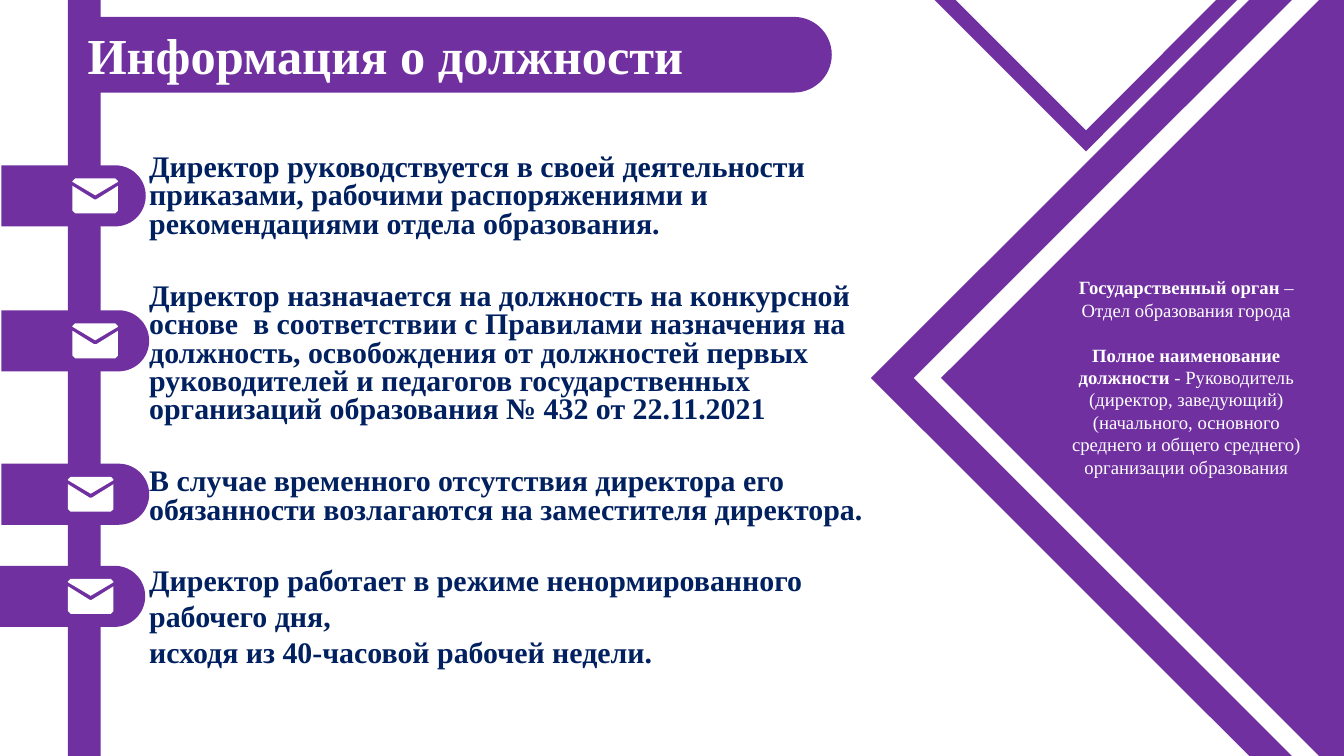
import math

import pptx
import pptx.dml.color
import pptx.enum.shapes
import pptx.enum.text
import pptx.util

Cm = pptx.util.Cm
Pt = pptx.util.Pt
RGBColor = pptx.dml.color.RGBColor

PURPLE = RGBColor(0x70, 0x30, 0xA0)
WHITE = RGBColor(0xFF, 0xFF, 0xFF)
NAVY = RGBColor(0x00, 0x20, 0x60)

WIDTH, HEIGHT = 50.8, 28.58
MIDDLE = HEIGHT / 2
PILL_HEIGHT = 2.31
ENVELOPE_HEIGHT = 1.32

ENVELOPE_BODY = [(0, 0.28), (0.82, 0.79), (0.9, 0.79), (1.72, 0.28),
                 (1.72, 1.22), (1.62, 1.32), (0.1, 1.32), (0, 1.22)]
ENVELOPE_FLAP = [(0, 0.1), (0.1, 0), (1.62, 0), (1.72, 0.1),
                 (1.72, 0.13), (0.86, 0.64), (0, 0.13)]

MARKERS = [
    (0.05, 6.25, 5.46, 2.74),
    (0.05, 11.73, 5.59, 2.74),
    (0.05, 17.53, 5.59, 2.57),
    (0, 21.39, 5.49, 2.57),
]

DUTIES = [
    ("Директор руководствуется в своей деятельности приказами, рабочими "
     "распоряжениями и рекомендациями отдела образования.", 8.4, 0.79),
    ("Директор назначается на должность на конкурсной основе  в соответствии "
     "с Правилами назначения на должность, освобождения от должностей первых "
     "руководителей и педагогов государственных организаций образования "
     "№ 432 от 22.11.2021", 47, 0.79),
    ("В случае временного отсутствия директора его обязанности возлагаются "
     "на заместителя директора.", 47, 0.79),
    ("Директор работает в режиме ненормированного рабочего дня,", 39, 1),
    ("исходя из 40-часовой рабочей недели.", 0, 1),
]

POSITION = [
    ("Государственный орган ", "– Отдел образования города", 0),
    ("Полное наименование должности ",
     "- Руководитель (директор, заведующий) (начального, основного среднего "
     "и общего среднего) организации образования", 24),
]


class SlideBuilder:
    font = "Times New Roman"

    def __init__(self, slide):
        self.slide = slide

    def paint(self, sp, color):
        sp.shadow.inherit = False
        sp.fill.solid()
        sp.fill.fore_color.rgb = color
        sp.line.fill.background()

    def bar(self, left, top, width, height, color):
        sp = self.slide.shapes.add_shape(
            pptx.enum.shapes.MSO_SHAPE.RECTANGLE,
            Cm(left), Cm(top), Cm(width), Cm(height))
        self.paint(sp, color)

    def outline(self, contours, color):
        contours = [[(Cm(x), Cm(y)) for x, y in c] for c in contours]
        builder = self.slide.shapes.build_freeform(*contours[0][0])
        for i, points in enumerate(contours):
            if i:
                builder.move_to(*points[0])
            builder.add_line_segments(points[1:], close=True)
        self.paint(builder.convert_to_shape(), color)

    def pill(self, left, top, width, height):
        radius = height / 2
        cx, cy = left + width - radius, top + radius
        angles = [math.radians(a) for a in range(-90, 91, 6)]
        arc = [(cx + radius * math.cos(a), cy + radius * math.sin(a))
               for a in angles]
        self.outline([[(left, top), *arc, (left, top + height)]], PURPLE)

    def envelope(self, left, top):
        self.outline([[(left + x, top + y) for x, y in part]
                      for part in (ENVELOPE_BODY, ENVELOPE_FLAP)], WHITE)

    def text_box(self, left, top, width, height, margins):
        sp = self.slide.shapes.add_textbox(
            Cm(left), Cm(top), Cm(width), Cm(height))
        tf = sp.text_frame
        tf.word_wrap = True
        tf.auto_size = pptx.enum.text.MSO_AUTO_SIZE.SHAPE_TO_FIT_TEXT
        (tf.margin_left, tf.margin_top,
         tf.margin_right, tf.margin_bottom) = map(Cm, margins)
        return tf

    def paragraph(self, tf, text, size, color, before=0, spacing=1, tail=None):
        p = tf.paragraphs[0] if not tf.text else tf.add_paragraph()
        p.text = text
        p.space_before = Pt(before)
        p.line_spacing = spacing
        if tail:
            p.alignment = pptx.enum.text.PP_ALIGN.CENTER
            p.add_run().text = tail
        for i, r in enumerate(p.runs):
            r.font.name = self.font
            r.font.size = Pt(size)
            r.font.bold = i == 0
            r.font.color.rgb = color


def main():
    prs = pptx.Presentation()
    prs.slide_width, prs.slide_height = Cm(WIDTH), Cm(HEIGHT)
    s = SlideBuilder(prs.slides.add_slide(prs.slide_layouts[6]))

    s.bar(2.57, 0, 1.24, HEIGHT, PURPLE)
    s.outline([[(WIDTH, HEIGHT), (47.22, HEIGHT), (32.92, MIDDLE),
                (47.22, 0), (WIDTH, 0)]], PURPLE)
    s.outline([[(48.84, HEIGHT), (34.54, MIDDLE), (48.84, 0),
                (49.85, 0), (35.56, MIDDLE), (49.85, HEIGHT)]], WHITE)
    s.outline([[(41.05, 5.72), (35.33, 0), (36.12, 0), (41.05, 4.93),
                (45.97, 0), (46.76, 0)]], PURPLE)

    s.pill(2.79, 0.64, 28.65, 2.86)
    tf = s.text_box(3.28, 0.89, 27.51, 2.34, (0.03, 0.03, 0, 0))
    s.paragraph(tf, "Информация о должности", 54, WHITE, before=1)

    for left, top, width, envelope_left in MARKERS:
        s.pill(left, top, width, PILL_HEIGHT)
        s.envelope(envelope_left, top + (PILL_HEIGHT - ENVELOPE_HEIGHT) / 2)

    tf = s.text_box(5.61, 5.56, 35.41, 18.52, (0.03, 0.3, 7.5, 0))
    for text, before, spacing in DUTIES:
        s.paragraph(tf, text, 32, NAVY, before, spacing)

    tf = s.text_box(39.8, 10.31, 10.08, 7.95, (0.25, 0.13, 0.25, 0.13))
    for label, value, before in POSITION:
        s.paragraph(tf, label, 20, WHITE, before, tail=value)

    prs.save("out.pptx")


if __name__ == "__main__":
    main()
